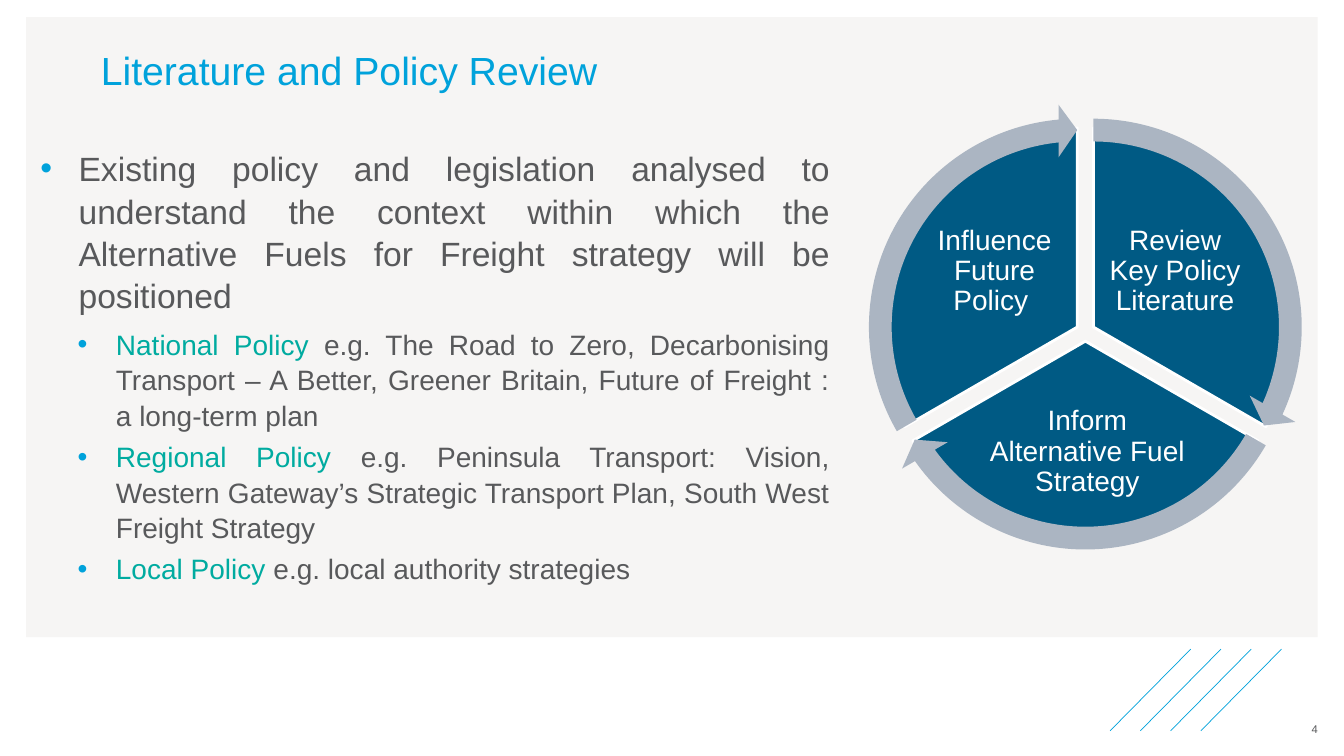
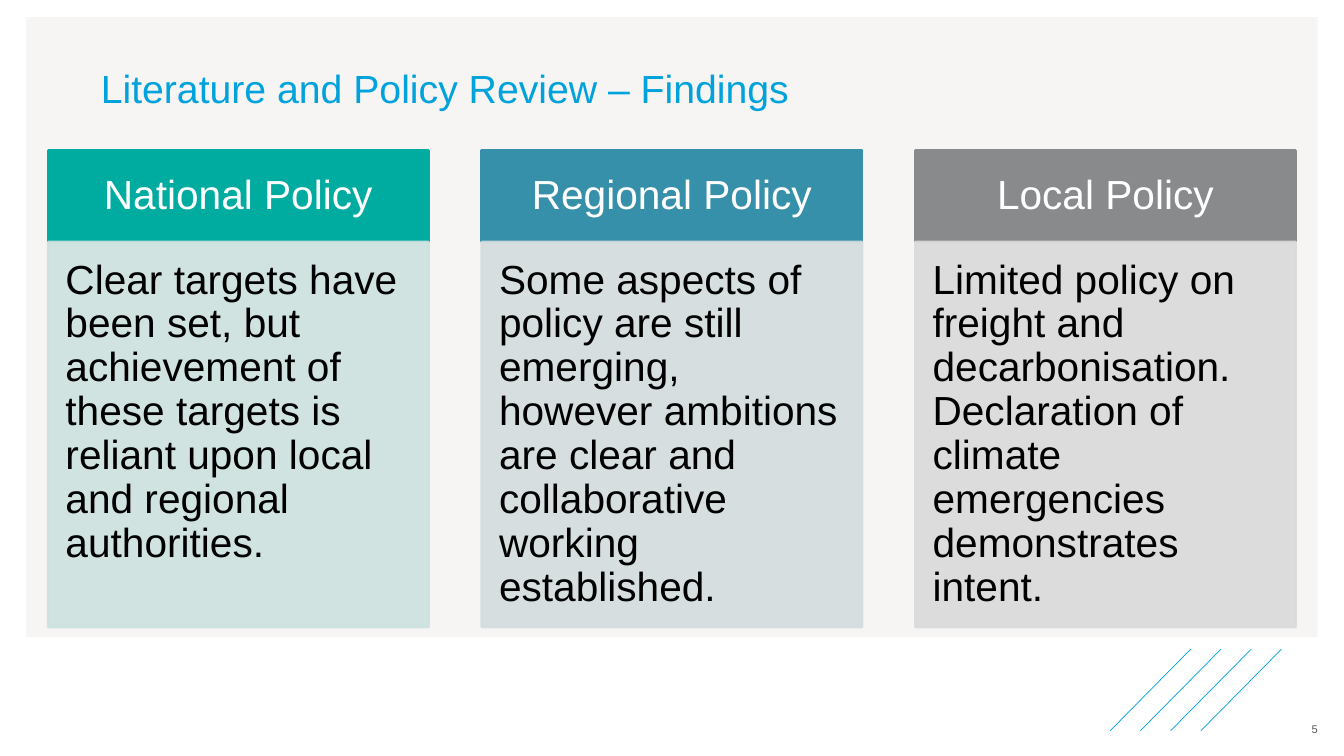
"""Build two slides on the literature and policy review."""
import dataclasses

import pptx
import pptx.dml.color
import pptx.enum.shapes
import pptx.enum.text
import pptx.oxml.ns
import pptx.util
from lxml import etree

Inches = pptx.util.Inches
Pt = pptx.util.Pt
RGB = pptx.dml.color.RGBColor.from_string
SHAPE = pptx.enum.shapes.MSO_SHAPE
ALIGN = pptx.enum.text.PP_ALIGN
ANCHOR = pptx.enum.text.MSO_ANCHOR
qn = pptx.oxml.ns.qn


@dataclasses.dataclass(frozen=True)
class Theme:
    """Hold the colours, font and type sizes."""
    font: str = "Arial"
    panel: str = "F6F5F4"
    accent: str = "00A2DB"
    teal: str = "00ABA0"
    navy: str = "005A84"
    arrow: str = "ABB5C2"
    blue: str = "3790A9"
    grey: str = "888A8C"
    text: str = "58595B"
    white: str = "FFFFFF"
    black: str = "000000"
    title_size: int = 28
    card_size: int = 29
    lead_size: int = 24
    body_size: int = 20
    number_size: int = 8


T = Theme()

REVIEW_TITLE = "Literature and Policy Review"
LEAD = ("Existing policy and legislation analysed to understand the context within "
        "which the Alternative Fuels for Freight strategy will be positioned")
POLICIES = [
    ("National Policy ", "e.g. The Road to Zero, Decarbonising Transport – A Better, "
     "Greener Britain, Future of Freight : a long-term plan"),
    ("Regional Policy ", "e.g. Peninsula Transport: Vision, Western Gateway’s Strategic "
     "Transport Plan, South West Freight Strategy"),
    ("Local Policy ", "e.g. local authority strategies"),
]
CYCLE = [
    {"label": "Review Key Policy Literature", "pie": (8.87, 1.27),
     "angles": (162, 18), "box": (10.95, 2.11, 1.41, 1.17)},
    {"label": "Inform Alternative Fuel Strategy", "pie": (8.79, 1.41),
     "angles": (18, 90), "box": (9.73, 3.97, 2.11, 1.03)},
    {"label": "Influence Future Policy ", "pie": (8.71, 1.27),
     "angles": (90, 162), "box": (9.16, 2.11, 1.41, 1.17)},
]
FINDINGS_TITLE = "Literature and Policy Review – Findings"
FINDINGS = [
    ("National Policy", T.teal, "CCE2DF",
     "Clear targets have been set, but achievement of these targets is reliant upon "
     "local and regional authorities."),
    ("Regional Policy", T.blue, "D3DCDE",
     "Some aspects of policy are still emerging, however ambitions are clear and "
     "collaborative working established."),
    ("Local Policy", T.grey, "DADADB",
     "Limited policy on freight and decarbonisation. Declaration of climate "
     "emergencies demonstrates intent."),
]


def add_run(p, text, size, color):
    """Add one formatted run."""
    r = p.add_run()
    r.text = text
    r.font.name = T.font
    r.font.size = Pt(size)
    r.font.color.rgb = RGB(color)


def set_frame(sp, anchor=ANCHOR.TOP, insets=(0, 0, 0, 0)):
    """Set wrapping, anchor and insets, and return the text frame."""
    tf = sp.text_frame
    tf.word_wrap = True
    tf.auto_size = pptx.enum.text.MSO_AUTO_SIZE.NONE
    tf.vertical_anchor = anchor
    tf.margin_left, tf.margin_top, tf.margin_right, tf.margin_bottom = map(Inches, insets)
    return tf


def write(sp, text, size, color, align=ALIGN.LEFT, spacing=0.9,
          anchor=ANCHOR.MIDDLE, insets=(0, 0, 0, 0)):
    """Write a single paragraph into a shape."""
    p = set_frame(sp, anchor, insets).paragraphs[0]
    p.alignment = align
    p.line_spacing = spacing
    add_run(p, text, size, color)


def add_shape(s, kind, box, fill, line=None, adjustments=(), alpha=None):
    """Add a preset shape without a shadow."""
    sp = s.shapes.add_shape(kind, *map(Inches, box))
    sp.shadow.inherit = False
    sp.fill.solid()
    sp.fill.fore_color.rgb = RGB(fill)
    if line:
        sp.line.color.rgb = RGB(line)
        sp.line.width = Pt(2)
    else:
        sp.line.fill.background()
    for i, value in enumerate(adjustments):
        sp.adjustments[i] = value
    if alpha:
        for color in sp._element.spPr.iter(qn("a:srgbClr")):
            etree.SubElement(color, qn("a:alpha"), val=str(alpha * 1000))
    return sp


def add_textbox(s, box):
    """Add an empty text box."""
    return s.shapes.add_textbox(*map(Inches, box))


def decorate_layout(s, layout):
    """Draw the panel and slanted lines once and move them to the layout."""
    parts = [add_shape(s, SHAPE.RECTANGLE, (0.26, 0.17, 12.81, 6.15), T.panel)]
    for i in range(4):
        x = 11.81 + 0.3 * i
        line = s.shapes.add_connector(
            pptx.enum.shapes.MSO_CONNECTOR.STRAIGHT,
            Inches(x), Inches(6.44), Inches(x - 0.8), Inches(7.25))
        line.line.color.rgb = RGB(T.accent)
        line.line.width = Pt(0.5)
        etree.SubElement(line._element.spPr, qn("a:effectLst"))
        parts.append(line)
    for i, part in enumerate(parts):
        part._element.xpath(".//p:cNvPr")[0].set("id", str(100 + i))
        layout.shapes._spTree.insert(2 + i, part._element)


def add_header(s, title, top, number):
    """Fill the title placeholder and add the slide number."""
    sp = s.shapes.title
    sp.left, sp.top, sp.width, sp.height = map(Inches, (1, top, 11.34, 1.01))
    write(sp, title, T.title_size, T.accent)
    write(add_textbox(s, (12.55, 7.09, 0.52, 0.21)), str(number), T.number_size, T.text,
          ALIGN.RIGHT, 1.0, ANCHOR.BOTTOM)


def add_bullet(p, indent, before, after, runs, size):
    """Format a justified bullet paragraph."""
    pPr = p._p.get_or_add_pPr()
    pPr.set("marL", str(Inches(indent)))
    pPr.set("indent", str(-Inches(0.38)))
    etree.SubElement(etree.SubElement(pPr, qn("a:buClr")), qn("a:srgbClr"), val=T.accent)
    etree.SubElement(pPr, qn("a:buFont"), typeface=T.font)
    etree.SubElement(pPr, qn("a:buChar"), char="•")
    p.alignment = ALIGN.JUSTIFY
    p.line_spacing = 1.05
    p.space_before, p.space_after = Pt(before), Pt(after)
    for text, color in runs:
        add_run(p, text, size, color)


def add_cycle(s):
    """Draw the three pie sectors, their labels and the arrows around them."""
    size, rim = 3.95, 0.24
    for step in CYCLE:
        add_shape(s, SHAPE.PIE, (*step["pie"], size, size), T.navy, T.white, step["angles"])
        write(add_textbox(s, step["box"]), step["label"], T.body_size, T.white,
              ALIGN.CENTER, insets=(0.03,) * 4)
    for step in CYCLE:
        x, y = step["pie"]
        start, end = step["angles"]
        add_shape(s, SHAPE.CIRCULAR_ARROW,
                  (x - rim, y - rim, size + 2 * rim, size + 2 * rim), T.arrow,
                  adjustments=(0.051, 3.275, end - 3.275, start, 0.059))


def build_review(s):
    """Build the review slide."""
    add_header(s, REVIEW_TITLE, 0.22, 4)
    tf = set_frame(add_textbox(s, (0.4, 1.45, 7.83, 4.49)))
    add_bullet(tf.paragraphs[0], 0.38, 0, 6, [(LEAD, T.text)], T.lead_size)
    for name, examples in POLICIES:
        add_bullet(tf.add_paragraph(), 0.75, 1.5, 3,
                   [(name, T.teal), (examples, T.text)], T.body_size)
    add_cycle(s)


def build_findings(s):
    """Build the findings slide."""
    add_header(s, FINDINGS_TITLE, 0.4, 5)
    left, top, step, width, head, body = 0.48, 1.49, 4.3, 3.77, 0.91, 3.82
    for i, (name, color, tint, finding) in enumerate(FINDINGS):
        x = left + i * step
        sp = add_shape(s, SHAPE.RECTANGLE, (x, top, width, head), color, color)
        write(sp, name, T.card_size, T.white, ALIGN.CENTER,
              insets=(0.23, 0.13, 0.23, 0.13))
        sp = add_shape(s, SHAPE.RECTANGLE, (x, top + head, width, body), tint, tint, alpha=90)
        write(sp, finding, T.card_size, T.black, anchor=ANCHOR.TOP,
              insets=(0.17, 0.17, 0.23, 0.25))


def main():
    """Build and save the presentation."""
    prs = pptx.Presentation()
    prs.slide_width, prs.slide_height = Inches(13.33), Inches(7.5)
    layout = prs.slide_layouts[5]
    review, findings = (prs.slides.add_slide(layout) for _ in range(2))
    decorate_layout(review, layout)
    build_review(review)
    build_findings(findings)
    prs.save("out.pptx")


if __name__ == "__main__":
    main()
